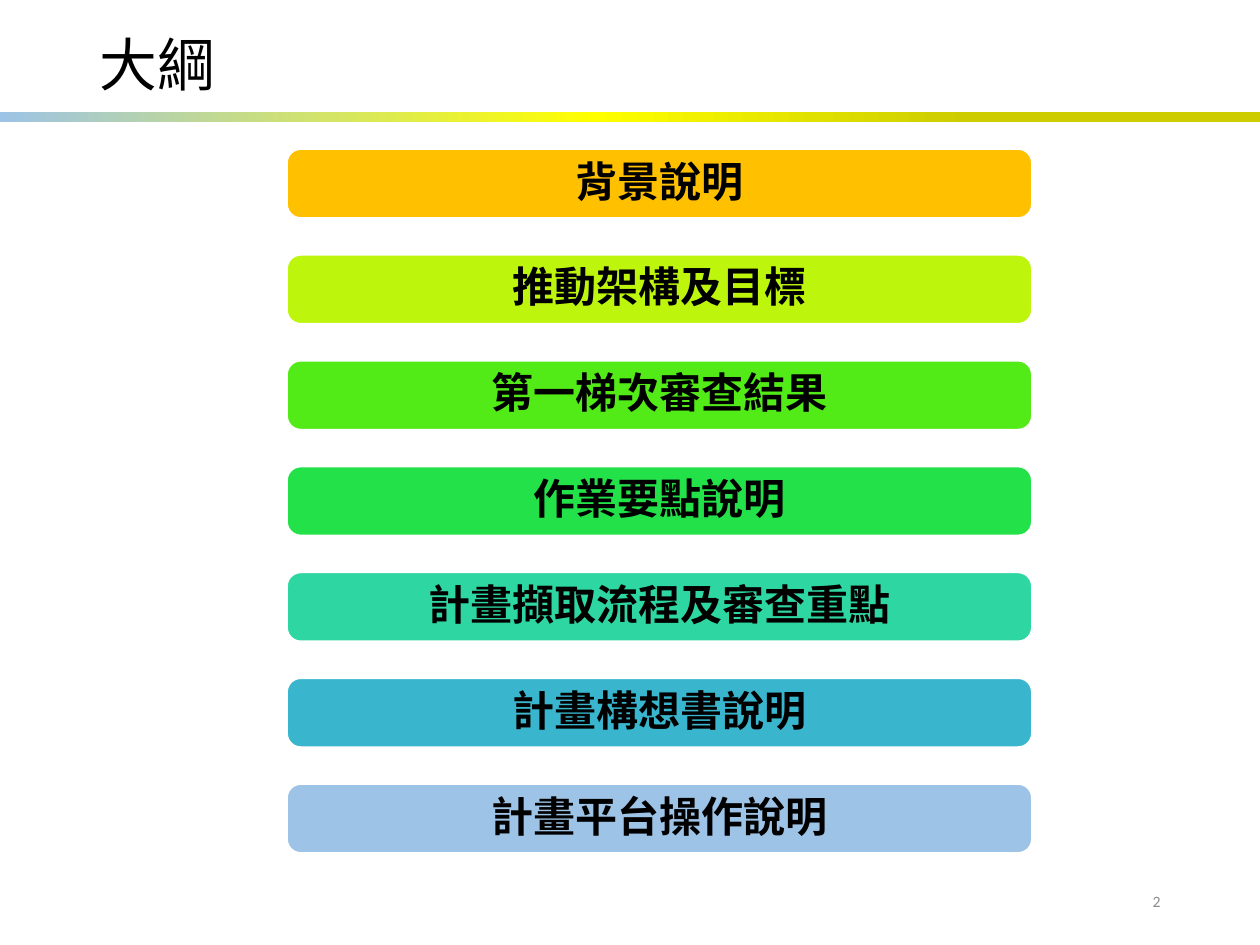
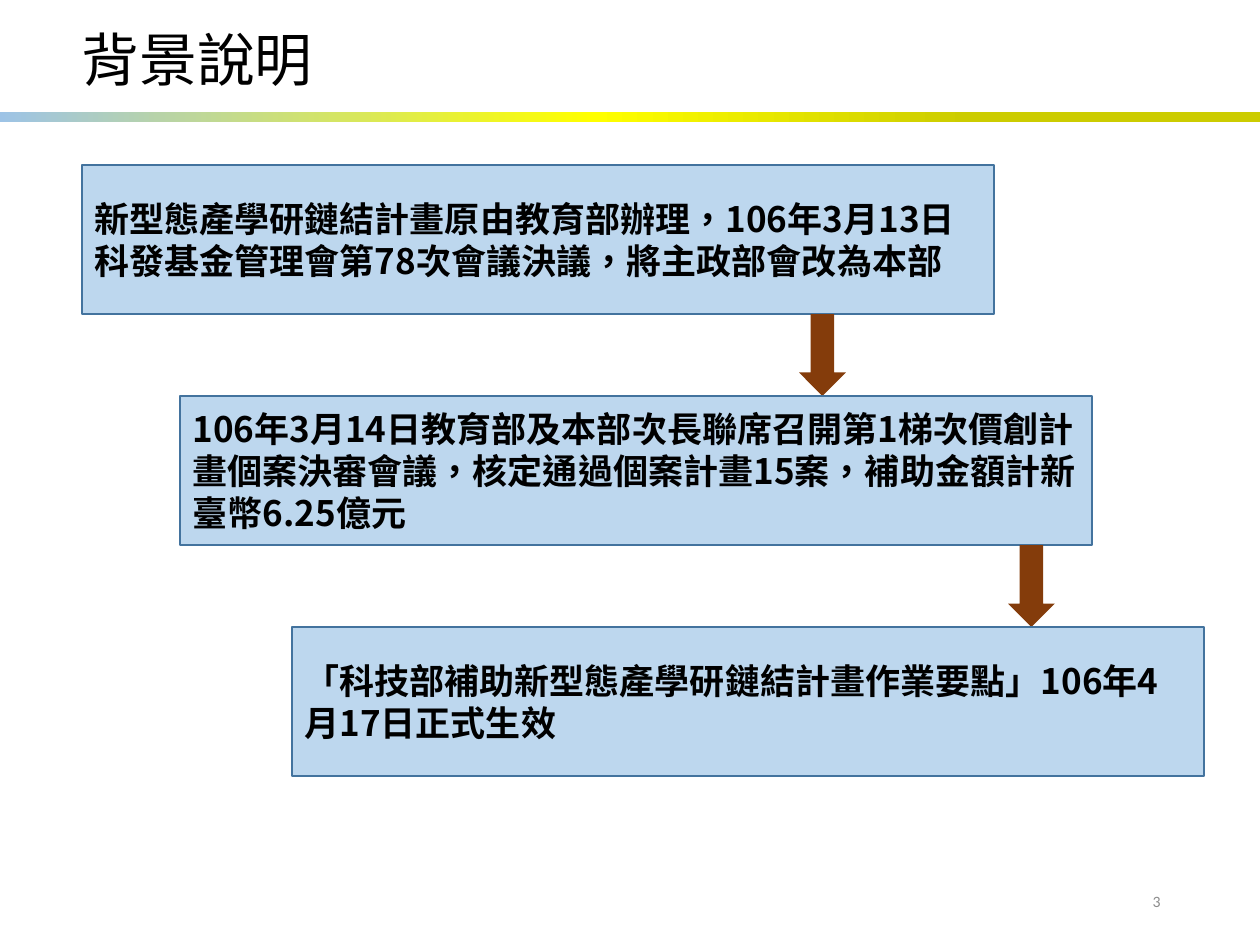
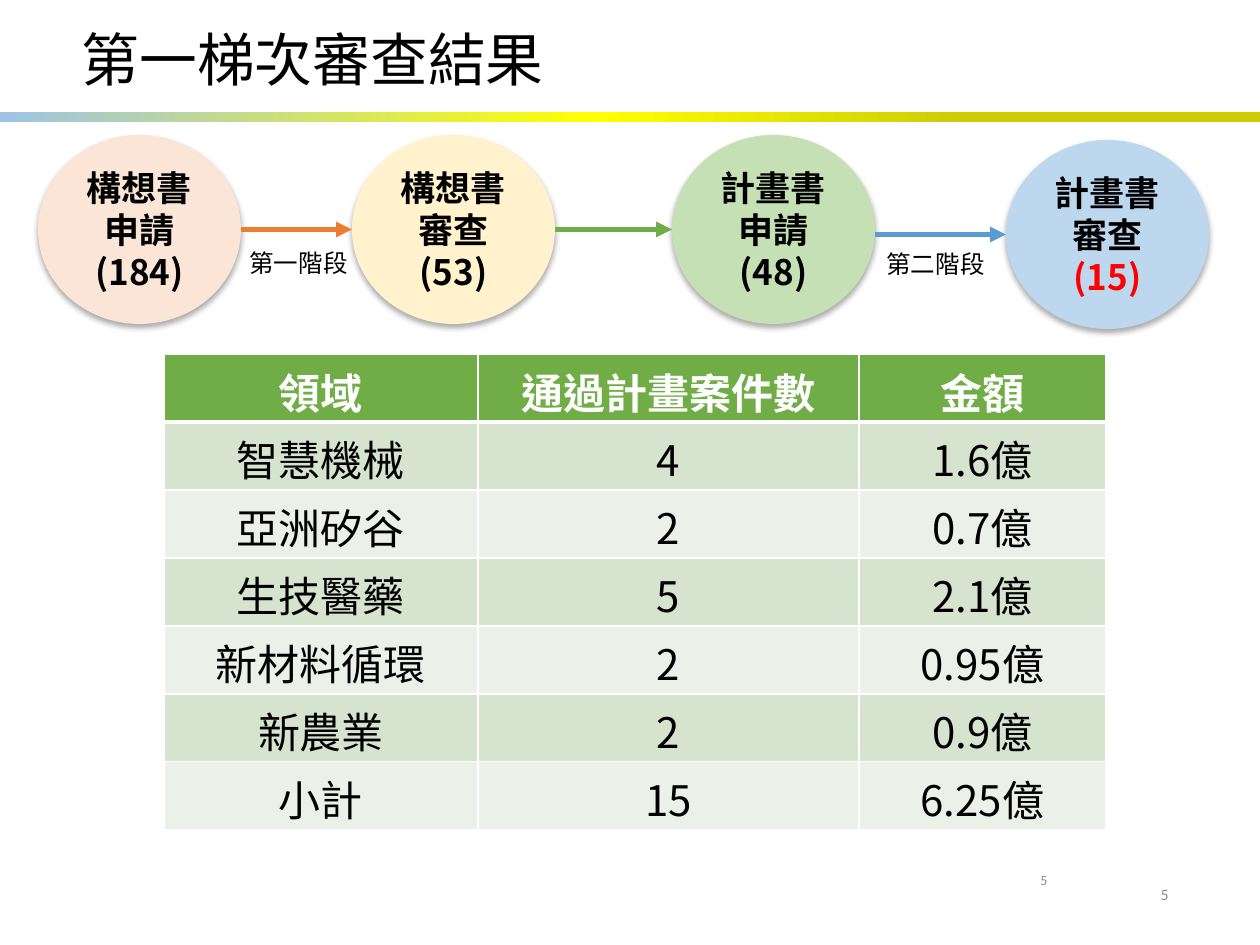
from lxml.etree import SubElement
from pptx import Presentation
from pptx.dml.color import RGBColor
from pptx.enum.shapes import MSO_CONNECTOR, MSO_SHAPE
from pptx.enum.text import MSO_ANCHOR as ANCHOR, MSO_AUTO_SIZE as FIT, PP_ALIGN as ALIGN
from pptx.oxml import parse_xml
from pptx.oxml.ns import nsdecls, qn
from pptx.util import Emu, Pt

# Shared style
CJK, LATIN = "Noto Sans CJK SC", "Calibri"
COLORS = {
    "black": "000000", "white": "FFFFFF", "red": "FF0000", "number": "8C8C8C",
    "box": "BDD7EE", "box_line": "43739E", "arrow": "843C0B",
    "header": "70AD47", "odd": "D5E3CF", "even": "EBF1E9",
}
BAND_STOPS = [(0, "9DC3E6"), (47, "FFFF00"), (77, "CCCC00"), (100, "CCCC00")]
SLIDE_W, SLIDE_H = 1260, 945
TITLE_BOX = (69, 0, 1086, 125)
NUMBER_BOX = (890, 876, 283, 50)

# Slide content
OUTLINE = [
    ("背景說明", "FFC000"),
    ("推動架構及目標", "BEF50C"),
    ("第一梯次審查結果", "53EB17"),
    ("作業要點說明", "23E148"),
    ("計畫擷取流程及審查重點", "2ED7A1"),
    ("計畫構想書說明", "39B6CE"),
    ("計畫平台操作說明", "9DC3E6"),
]
BACKGROUND = [  # box left, arrow left, text
    (82, 799, "新型態產學研鏈結計畫原由教育部辦理，106年3月13日科發基金管理會第78次會議決議，"
              "將主政部會改為本部"),
    (180, 1008, "106年3月14日教育部及本部次長聯席召開第1梯次價創計畫個案決審會議，"
                "核定通過個案計畫15案，補助金額計新臺幣6.25億元"),
    (292, None, "「科技部補助新型態產學研鏈結計畫作業要點」106年4月17日正式生效"),
]
STAGES = [  # left, top, lines, fill, count colour
    (38, 135, ["構想書", "申請", "(184)"], "FBE5D6", "black"),
    (352, 135, ["構想書", "審查", "(53)"], "FFF2CC", "black"),
    (672, 135, ["計畫書", "申請", "(48)"], "C5E0B4", "black"),
    (1006, 140, ["計畫書", "審查", "(15)"], "BDD7EE", "red"),
]
STAGE_ARROWS = ["ED7D31", "70AD47", "5B9BD5"]
STAGE_LABELS = [("第一階段", (237, 242, 135, 43)), ("第二階段", (874, 243, 144, 43))]
RESULTS = [
    ("領域", "通過計畫案件數", "金額"),
    ("智慧機械", "4", "1.6億"),
    ("亞洲矽谷", "2", "0.7億"),
    ("生技醫藥", "5", "2.1億"),
    ("新材料循環", "2", "0.95億"),
    ("新農業", "2", "0.9億"),
    ("小計", "15", "6.25億"),
]
RESULT_COLUMNS = [314, 381, 247]


def px(length):
    return Emu(round(length * 914400 / 126))


def rgb(color):
    return RGBColor.from_string(COLORS.get(color, color))


def write(frame, lines, size, color="black", bold=False, align=ALIGN.LEFT,
          font=CJK, spacing=None):
    frame.word_wrap = True
    frame.text = "\n".join(lines)
    for para in frame.paragraphs:
        para.alignment = align
        if spacing:
            para.line_spacing = spacing
        for span in para.runs:
            span.font.size, span.font.bold, span.font.name = Pt(size), bold, font
            span.font.color.rgb = rgb(color)
            props = span.font._element
            props.set("lang", "zh-TW")
            SubElement(props, qn("a:ea"), typeface=font)


def add_box(slide, kind, place, fill, line=None):
    box = slide.shapes.add_shape(kind, *map(px, place))
    box.shadow.inherit = False
    box.fill.solid()
    box.fill.fore_color.rgb = rgb(fill)
    if line:
        box.line.color.rgb = rgb(line)
        box.line.width = Pt(1)
    else:
        box.line.fill.background()
    box.text_frame.vertical_anchor = ANCHOR.MIDDLE
    return box


def add_text(slide, place, text, size, **style):
    box = slide.shapes.add_textbox(*map(px, place))
    write(box.text_frame, [text], size, **style)
    return box


def add_number(slide, number, place=NUMBER_BOX, size=9):
    box = add_text(slide, place, number, size, color="number", align=ALIGN.RIGHT, font=LATIN)
    box.text_frame.vertical_anchor = ANCHOR.MIDDLE


def add_page(deck, title, title_place=TITLE_BOX):
    slide = deck.slides.add_slide(deck.slide_layouts[5])
    box = slide.shapes.title
    box.left, box.top, box.width, box.height = map(px, title_place)
    box.text_frame.auto_size = FIT.NONE
    box.text_frame.vertical_anchor = ANCHOR.MIDDLE
    write(box.text_frame, [title], 33, spacing=0.9)
    return slide


def move_band_to_layout(slide):
    """Draw the gradient band and hand it to the layout all slides share."""
    band = add_box(slide, MSO_SHAPE.RECTANGLE, (0, 112, SLIDE_W, 10), "white")
    band.fill.gradient()
    band.fill.gradient_angle = 0
    stops = band._element.spPr.find(".//" + qn("a:gsLst"))
    stops.clear()
    for position, color in BAND_STOPS:
        stop = SubElement(stops, qn("a:gs"), pos=str(position * 1000))
        SubElement(stop, qn("a:srgbClr"), val=color)
    slide.slide_layout.shapes._spTree.append(band._element)


def add_soft_shadow(shape):
    effects = shape._element.spPr.find(qn("a:effectLst"))
    effects.append(parse_xml(
        f'<a:outerShdw {nsdecls("a")} blurRad="{Pt(3.5)}" dist="{Pt(2.2)}" dir="5400000" '
        'rotWithShape="0"><a:srgbClr val="000000"><a:alpha val="32000"/></a:srgbClr>'
        '</a:outerShdw>'))


def add_arrow(slide, start, end, color):
    arrow = slide.shapes.add_connector(MSO_CONNECTOR.STRAIGHT, *map(px, start + end))
    arrow.line.color.rgb = rgb(color)
    arrow.line.width = Pt(3)
    SubElement(arrow.line._get_or_add_ln(), qn("a:tailEnd"), type="triangle")
    SubElement(arrow._element.spPr, qn("a:effectLst"))


def set_borders(cell, top, bottom):
    props = cell._tc.get_or_add_tcPr()
    widths = [("lnL", 1), ("lnR", 1), ("lnT", top), ("lnB", bottom)]
    for index, (side, width) in enumerate(widths):
        props.insert(index, parse_xml(
            f'<a:{side} {nsdecls("a")} w="{Pt(width)}"><a:solidFill>'
            f'<a:srgbClr val="{COLORS["white"]}"/></a:solidFill></a:{side}>'))


def build_outline(deck):
    slide = add_page(deck, "大綱", (87, 10, 1086, 115))
    move_band_to_layout(slide)
    add_number(slide, "2")
    first_top, last_top = 149, 784
    pitch = (last_top - first_top) / (len(OUTLINE) - 1)
    for index, (text, fill) in enumerate(OUTLINE):
        place = (287, first_top + index * pitch, 745, 69)
        bar = add_box(slide, MSO_SHAPE.ROUNDED_RECTANGLE, place, fill, "white")
        bar.adjustments[0] = 0.2
        frame = bar.text_frame
        frame.margin_left = frame.margin_right = px(23)
        frame.margin_top = frame.margin_bottom = px(4)
        write(frame, [text], 24, bold=True, align=ALIGN.CENTER, spacing=0.9)


def build_background(deck):
    slide = add_page(deck, "背景說明")
    add_number(slide, "3")
    height, pitch = 149, 231
    for index, (left, arrow_left, text) in enumerate(BACKGROUND):
        top = 165 + index * pitch
        box = add_box(slide, MSO_SHAPE.RECTANGLE, (left, top, 912, height), "box", "box_line")
        write(box.text_frame, [text], 20, bold=True)
        if arrow_left:
            place = (arrow_left, top + height, 47, pitch - height)
            add_box(slide, MSO_SHAPE.DOWN_ARROW, place, "arrow")


def build_results(deck):
    slide = add_page(deck, "第一梯次審查結果")
    add_number(slide, "5", (898, 869, 283, 50))
    add_number(slide, "5", (885, 861, 175, 37), 8)

    # Table of approved projects
    row_height = 68
    table = slide.shapes.add_table(
        len(RESULTS), len(RESULT_COLUMNS), px(164), px(354),
        px(sum(RESULT_COLUMNS)), px(row_height * len(RESULTS))).table
    for column, width in zip(table.columns, RESULT_COLUMNS):
        column.width = px(width)
    for r, values in enumerate(RESULTS):
        header = r == 0
        fill = "header" if header else "odd" if r % 2 else "even"
        for c, value in enumerate(values):
            cell = table.cell(r, c)
            cell.fill.solid()
            cell.fill.fore_color.rgb = rgb(fill)
            cell.vertical_anchor = ANCHOR.MIDDLE
            write(cell.text_frame, [value], 24, "white" if header else "black",
                  bold=header, align=ALIGN.CENTER)
            set_borders(cell, top=3 if r == 1 else 1, bottom=3 if header else 1)

    # Review stages and the arrows between them
    width, height = 203, 189
    for left, top, lines, fill, count_color in STAGES:
        stage = add_box(slide, MSO_SHAPE.OVAL, (left, top, width, height), fill)
        add_soft_shadow(stage)
        write(stage.text_frame, lines, 20, bold=True, align=ALIGN.CENTER)
        stage.text_frame.paragraphs[-1].runs[0].font.color.rgb = rgb(count_color)
    for source, target, color in zip(STAGES, STAGES[1:], STAGE_ARROWS):
        middle = target[1] + height / 2
        add_arrow(slide, (source[0] + width, middle), (target[0], middle), color)
    for text, place in STAGE_LABELS:
        add_text(slide, place, text, 14)


def main():
    deck = Presentation()
    deck.slide_width, deck.slide_height = px(SLIDE_W), px(SLIDE_H)
    build_outline(deck)
    build_background(deck)
    build_results(deck)
    deck.save("out.pptx")


if __name__ == "__main__":
    main()
